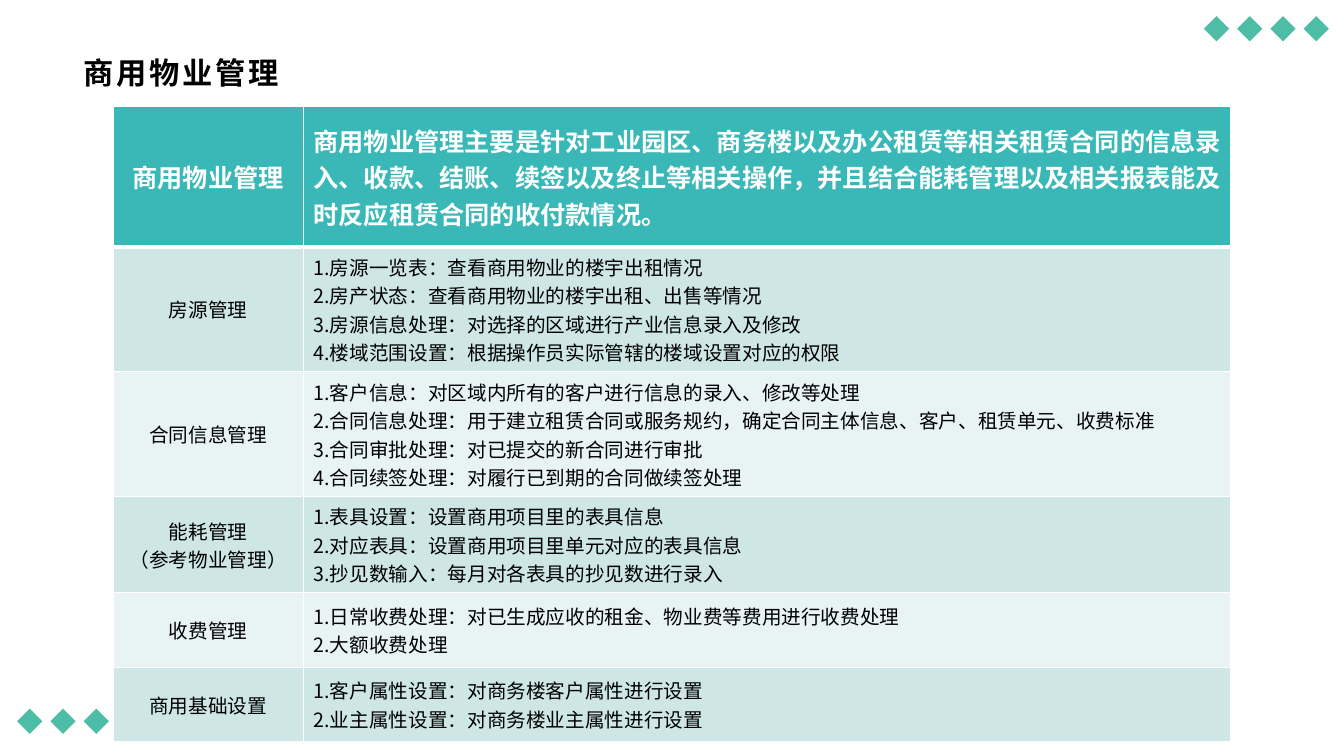
"""Build the commercial property management slide with its table of functions."""
from lxml.etree import SubElement
from pptx import Presentation
from pptx.dml.color import RGBColor
from pptx.enum.shapes import MSO_SHAPE
from pptx.enum.text import MSO_ANCHOR, PP_ALIGN
from pptx.oxml.ns import qn
from pptx.util import Inches, Pt

COLORS = {"gem": "4EBDA5", "head": "3AB7B7", "dark": "CEE6E6",
          "light": "E8F3F3", "white": "FFFFFF", "black": "000000"}
SANS = "Noto Sans CJK SC"

ROWS = [
    (1.39, ["商用物业管理"],
     ["商用物业管理主要是针对工业园区、商务楼以及办公租赁等相关租赁合同的信息录入、收款、结账、续签以及终止等相关操作，并且结合能耗管理以及相关报表能及时反应租赁合同的收付款情况。"]),
    (1.24, ["房源管理"],
     ["1.房源一览表：查看商用物业的楼宇出租情况",
      "2.房产状态：查看商用物业的楼宇出租、出售等情况",
      "3.房源信息处理：对选择的区域进行产业信息录入及修改",
      "4.楼域范围设置：根据操作员实际管辖的楼域设置对应的权限"]),
    (1.24, ["合同信息管理"],
     ["1.客户信息：对区域内所有的客户进行信息的录入、修改等处理",
      "2.合同信息处理：用于建立租赁合同或服务规约，确定合同主体信息、客户、租赁单元、收费标准",
      "3.合同审批处理：对已提交的新合同进行审批",
      "4.合同续签处理：对履行已到期的合同做续签处理"]),
    (0.95, ["能耗管理", "（参考物业管理）"],
     ["1.表具设置：设置商用项目里的表具信息",
      "2.对应表具：设置商用项目里单元对应的表具信息",
      "3.抄见数输入：每月对各表具的抄见数进行录入"]),
    (0.74, ["收费管理"],
     ["1.日常收费处理：对已生成应收的租金、物业费等费用进行收费处理",
      "2.大额收费处理"]),
    (0.74, ["商用基础设置"],
     ["1.客户属性设置：对商务楼客户属性进行设置",
      "2.业主属性设置：对商务楼业主属性进行设置"]),
]


def write(frame, lines, size, color, bold, face, align=PP_ALIGN.LEFT):
    frame.text = "\n".join(lines)
    for para in frame.paragraphs:
        para.alignment = align
        for run in para.runs:
            font = run.font
            font.size, font.bold, font.name = Pt(size), bold, face
            font.color.rgb = RGBColor.from_string(COLORS[color])
            SubElement(font._element, qn("a:ea"), typeface=SANS)


def border(cell, side, width):
    props = cell._tc.get_or_add_tcPr()
    line = SubElement(props, qn(f"a:ln{side}"), w=str(Pt(width)))
    fill = SubElement(line, qn("a:solidFill"))
    SubElement(fill, qn("a:srgbClr"), val=COLORS["white"])


deck = Presentation()
deck.slide_width, deck.slide_height = Inches(13.33), Inches(7.5)
slide = deck.slides.add_slide(deck.slide_layouts[6])

for left, top, count in [(0.17, 7.03, 3), (11.94, 0.16, 4)]:
    for i in range(count):
        gem = slide.shapes.add_shape(
            MSO_SHAPE.DIAMOND, Inches(left + 0.33 * i), Inches(top),
            Inches(0.25), Inches(0.25))
        gem.shadow.inherit = False
        gem.fill.solid()
        gem.fill.fore_color.rgb = RGBColor.from_string(COLORS["gem"])
        gem.line.fill.background()

title = slide.shapes.add_textbox(
    Inches(0.73), Inches(0.48), Inches(11.87), Inches(0.48))
frame = title.text_frame
frame.word_wrap = True
frame.vertical_anchor = MSO_ANCHOR.MIDDLE
write(frame, ["商用物业管理"], 21.6, "black", True, "Arial")
frame.paragraphs[0].runs[0].font._element.set("spc", "200")

total = sum(row[0] for row in ROWS)
table = slide.shapes.add_table(
    len(ROWS), 2, Inches(1.12), Inches(1.06), Inches(11.09), Inches(total)).table
for col, width in zip(table.columns, [1.89, 9.2]):
    col.width = Inches(width)

for r, (height, *texts) in enumerate(ROWS):
    table.rows[r].height = Inches(height)
    head = r == 0
    shade = "head" if head else "dark" if r % 2 else "light"
    for c, lines in enumerate(texts):
        cell = table.cell(r, c)
        cell.vertical_anchor = MSO_ANCHOR.MIDDLE
        for side in "LRTB":
            thick = head and side == "B" or r == 1 and side == "T"
            border(cell, side, 3 if thick else 1)
        cell.fill.solid()
        cell.fill.fore_color.rgb = RGBColor.from_string(COLORS[shade])
        write(cell.text_frame, lines, 18 if head else 14,
              "white" if head else "black", head,
              "Arial" if head and c == 0 else SANS,
              PP_ALIGN.LEFT if c else PP_ALIGN.CENTER)

deck.save("out.pptx")
